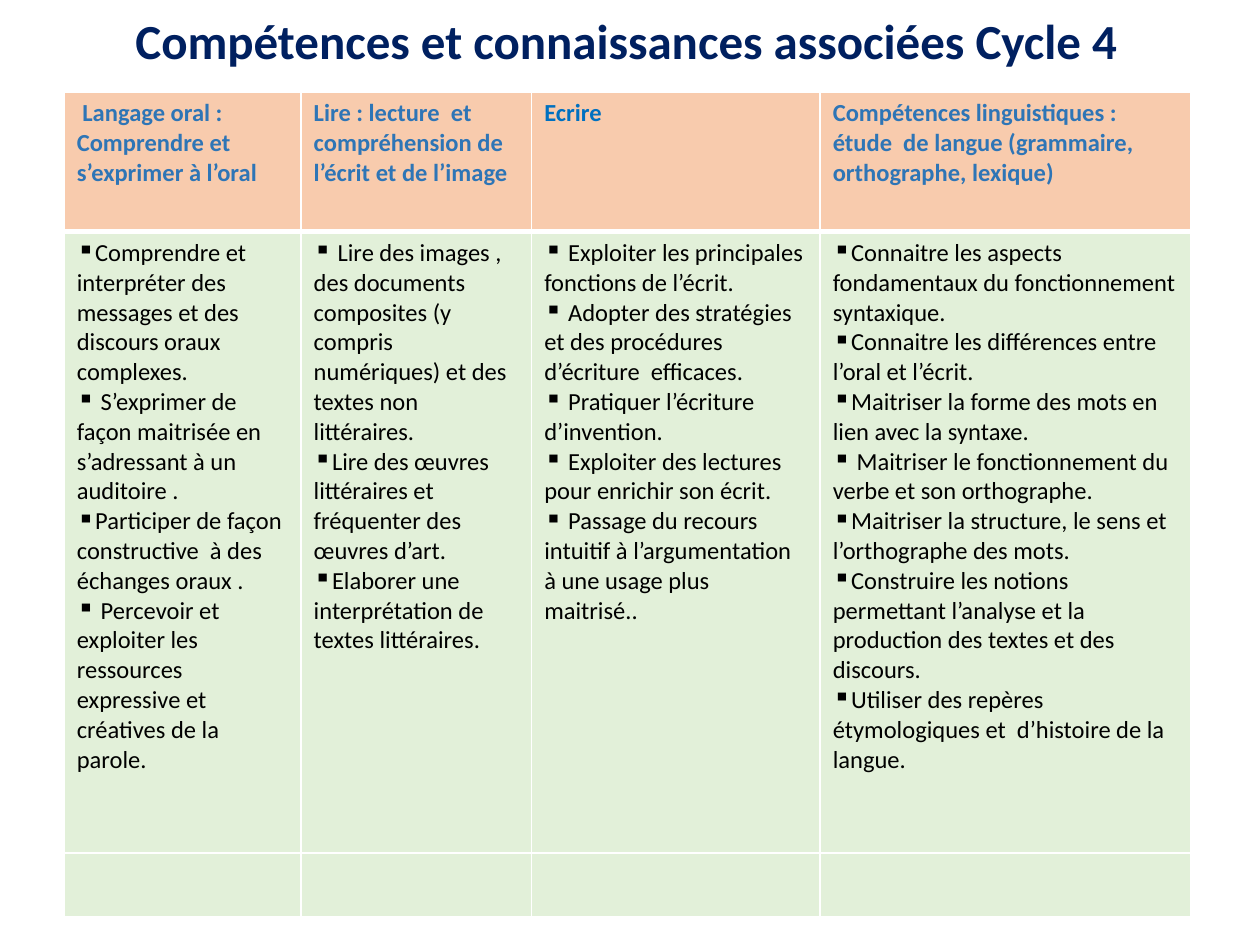
"""Build the Cycle 4 slide: a title above a table of skills by field."""
import pptx
import pptx.dml.color
import pptx.enum.text
import pptx.oxml
import pptx.oxml.ns
import pptx.util
from pptx.util import Inches

TITLE = "Compétences et connaissances associées Cycle 4"
FIELDS = [
    {"heading": " Langage oral : Comprendre et s’exprimer à l’oral",
     "color": "2E75B6", "width": 1.88,
     "skills": [
         "Comprendre et interpréter des messages et des discours oraux complexes.",
         " S’exprimer de façon maitrisée en s’adressant à un auditoire .",
         "Participer de façon constructive  à des échanges oraux .",
         " Percevoir et exploiter les ressources expressive et créatives de la parole."]},
    {"heading": "Lire : lecture  et compréhension de l’écrit et de l’image",
     "color": "2E75B6", "width": 1.83,
     "skills": [
         " Lire des images , des documents composites (y compris numériques) et des "
         "textes non littéraires.",
         "Lire des œuvres littéraires et fréquenter des œuvres d’art.",
         "Elaborer une interprétation de textes littéraires."]},
    {"heading": "Ecrire",
     "color": "0070C0", "width": 2.29,
     "skills": [
         " Exploiter les principales fonctions de l’écrit.",
         " Adopter des stratégies  et des procédures d’écriture  efficaces.",
         " Pratiquer l’écriture d’invention.",
         " Exploiter des lectures pour enrichir son écrit.",
         " Passage du recours intuitif à l’argumentation à une usage plus maitrisé.."]},
    {"heading": "Compétences linguistiques : étude  de langue (grammaire, "
                "orthographe, lexique)",
     "color": "2E75B6", "width": 2.94,
     "skills": [
         "Connaitre les aspects fondamentaux du fonctionnement syntaxique.",
         "Connaitre les différences entre l’oral et l’écrit.",
         "Maitriser la forme des mots en lien avec la syntaxe.",
         " Maitriser le fonctionnement du verbe et son orthographe.",
         "Maitriser la structure, le sens et l’orthographe des mots.",
         "Construire les notions permettant l’analyse et la production des textes "
         "et des discours.",
         "Utiliser des repères étymologiques et  d’histoire de la langue."]},
]
ROW_HEIGHTS = [1.11, 4.93, 0.51]
ROW_FILLS = ["F8CBAD", "E2F0D9", "E2F0D9"]
TITLE_FONT = {"name": "Calibri", "size": pptx.util.Pt(28), "bold": True}
HEADING_FONT = {"name": "Calibri", "size": pptx.util.Pt(14), "bold": True}
SKILL_FONT = HEADING_FONT | {"bold": False}
TITLE_FRAME = {"word_wrap": True, "vertical_anchor": pptx.enum.text.MSO_ANCHOR.MIDDLE,
               "margin_top": 0, "margin_bottom": 0}
TITLE_PARAGRAPH = {"alignment": pptx.enum.text.PP_ALIGN.CENTER, "line_spacing": 0.9}


def rgb(color):
    return pptx.dml.color.RGBColor.from_string(color)


def apply(target, values):
    for key, value in values.items():
        setattr(target, key, value)


def write(paragraph, text, font, color):
    run = paragraph.add_run()
    run.text = text
    apply(run.font, font)
    run.font.color.rgb = rgb(color)


def add_bullet(paragraph):
    properties = paragraph._p.get_or_add_pPr()
    properties.set("marL", "0")
    properties.set("indent", "0")
    properties.append(pptx.oxml.parse_xml(
        f'<a:buChar {pptx.oxml.ns.nsdecls("a")} char="▪"/>'))


def style_cell(cell, fill, bottom_width):
    for side, width in {"L": 1, "R": 1, "T": 1, "B": bottom_width}.items():
        cell._tc.get_or_add_tcPr().append(pptx.oxml.parse_xml(
            f'<a:ln{side} {pptx.oxml.ns.nsdecls("a")} w="{pptx.util.Pt(width)}">'
            f'<a:solidFill><a:srgbClr val="FFFFFF"/></a:solidFill></a:ln{side}>'))
    cell.fill.solid()
    cell.fill.fore_color.rgb = rgb(fill)


deck = pptx.Presentation()
apply(deck, {"slide_width": Inches(10), "slide_height": Inches(7.5)})
slide = deck.slides.add_slide(deck.slide_layouts[6])

title = slide.shapes.add_textbox(
    Inches(0.39), Inches(0.1), Inches(9.16), Inches(0.49)).text_frame
apply(title, TITLE_FRAME)
apply(title.paragraphs[0], TITLE_PARAGRAPH)
write(title.paragraphs[0], TITLE, TITLE_FONT, "002060")

widths = [field["width"] for field in FIELDS]
skills_table = slide.shapes.add_table(
    len(ROW_HEIGHTS), len(FIELDS), Inches(0.51), Inches(0.73),
    Inches(sum(widths)), Inches(sum(ROW_HEIGHTS))).table
for row, height in zip(skills_table.rows, ROW_HEIGHTS):
    row.height = Inches(height)

for column, field in enumerate(FIELDS):
    skills_table.columns[column].width = Inches(field["width"])
    for row, fill in enumerate(ROW_FILLS):
        style_cell(skills_table.cell(row, column), fill, 3 if row == 0 else 1)
    heading = skills_table.cell(0, column).text_frame
    write(heading.paragraphs[0], field["heading"], HEADING_FONT, field["color"])
    skills = skills_table.cell(1, column).text_frame
    for index, skill in enumerate(field["skills"]):
        paragraph = skills.add_paragraph() if index else skills.paragraphs[0]
        add_bullet(paragraph)
        write(paragraph, skill, SKILL_FONT, "000000")

deck.save("out.pptx")
